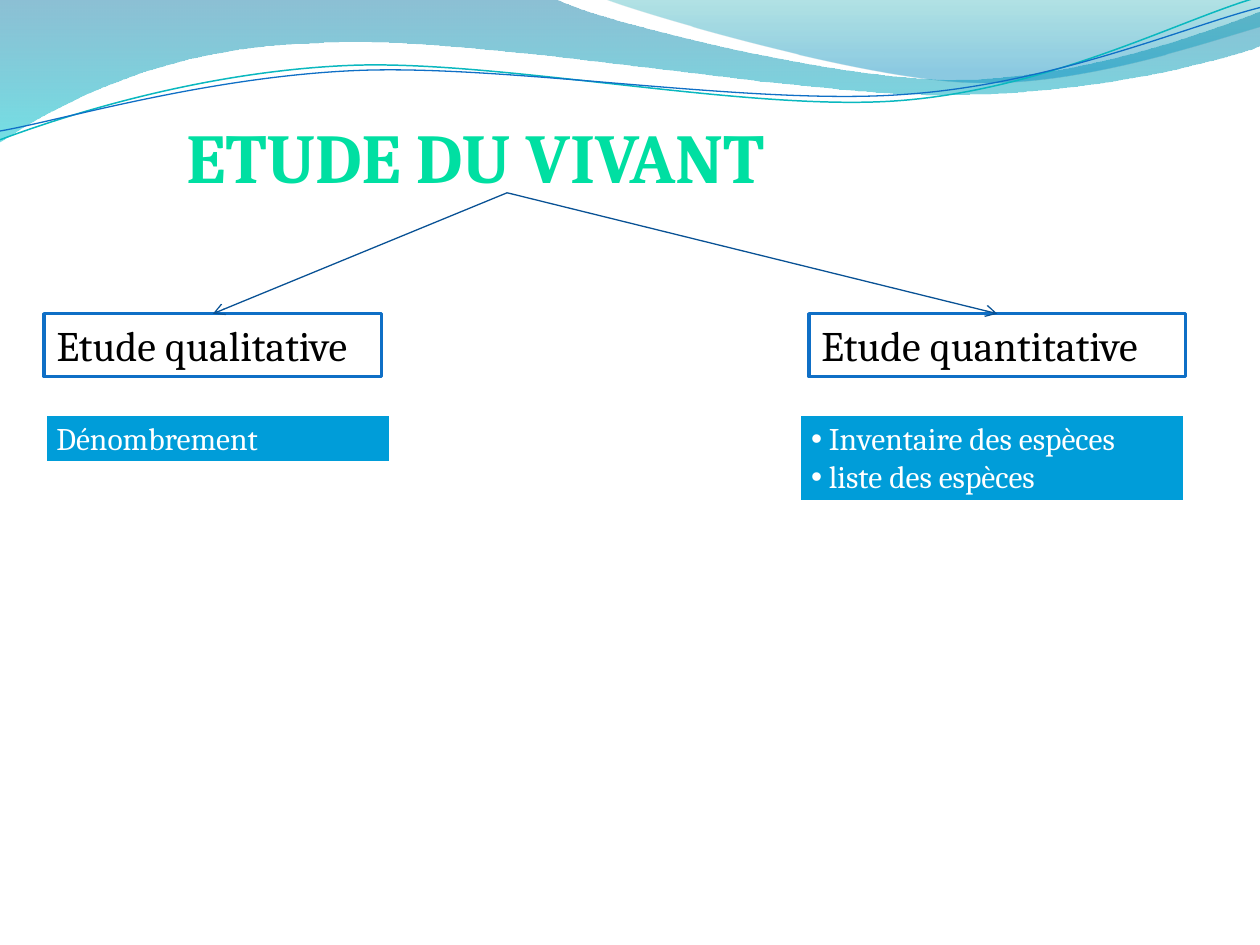
import pptx
import pptx.dml.color
import pptx.enum.shapes
import pptx.enum.text
import pptx.oxml
import pptx.oxml.ns
import pptx.util

Inches, Pt = pptx.util.Inches, pptx.util.Pt
FONT = "Cambria"
TITLE = ("ETUDE DU VIVANT", (1.38, 0.52, 5.29, 1.01))
BRANCHES = [
    {"heading": "Etude quantitative", "heading_box": (6.42, 2.49, 2.99, 0.5),
     "details": ["Inventaire des espèces", "liste des espèces"],
     "details_box": (6.34, 3.28, 3.07, 0.71)},
    {"heading": "Etude qualitative", "heading_box": (0.35, 2.49, 2.68, 0.5),
     "details": ["Dénombrement"], "details_box": (0.35, 3.28, 2.76, 0.4)},
]
BANDS = [
    {"path": [(0, 0), (4.4, -0.01), (4.76, 0.17, 6.64, 0.63, 7.58, 0.63),
              (8.53, 0.63, 9.58, 0.26, 10, 0.09), (10.01, 0.36),
              (9.83, 0.44, 8.7, 0.76, 7.46, 0.75),
              (6.22, 0.75, 3.82, 0.28, 2.57, 0.34),
              (1.29, 0.36, 0.46, 0.83, -0.01, 1.13)],
     "stops": [(0, "0074A1", 45), (100, "00C6CF", 55)]},
    {"path": [(4.79, -0.01), (5.09, 0.11, 6.82, 0.62, 7.69, 0.65),
              (8.56, 0.69, 9.61, 0.32, 10, 0.21), (10, 0)],
     "stops": [(0, "00A1A9", 30), (80, "008BBF", 45)]},
]
WAVES = [
    {"path": [(0, 1.11), (0.48, 0.93, 1.58, 0.57, 2.77, 0.52),
              (3.95, 0.47, 5.93, 0.89, 7.13, 0.8),
              (8.33, 0.71, 9.38, 0.15, 9.98, -0.02)],
     "line": ("0AB8BF", 0.85)},
    {"path": [(0, 1.04), (0.47, 0.96, 1.64, 0.61, 2.83, 0.56),
              (4.03, 0.51, 5.97, 0.84, 7.17, 0.75),
              (8.36, 0.67, 9.41, 0.21, 10, 0.06)],
     "line": ("0F6FC6", 0.75)},
]


def rgb(value):
    """Turn a hex string into a colour."""
    return pptx.dml.color.RGBColor.from_string(value)


def add_xml(parent, tag, **attributes):
    """Append a DrawingML element with the given attributes and return it."""
    element = pptx.oxml.parse_xml(f"<{tag} {pptx.oxml.ns.nsdecls('a')}/>")
    for key, value in attributes.items():
        element.set(key, str(value))
    parent.append(element)
    return element


def add_outline(slide, path, close):
    """Draw a path of line ends and cubic curves as a freeform."""
    start, *rest = [(Inches(x), Inches(y)) for segment in path
                    for x, y in zip(segment[::2], segment[1::2])]
    builder = slide.shapes.build_freeform(*start)
    builder.add_line_segments(rest, close=close)
    outline = builder.convert_to_shape()
    outline.shadow.inherit = False
    lines = iter(list(outline._element.iter(pptx.oxml.ns.qn("a:lnTo"))))
    for segment in path[1:]:
        first = next(lines)
        if len(segment) == 6:
            curve = add_xml(first.getparent(), "a:cubicBezTo")
            first.addprevious(curve)
            for line in (first, next(lines), next(lines)):
                curve.append(line[0])
                line.getparent().remove(line)
    return outline


def add_band(slide, path, stops):
    """Draw a translucent band shaded from top to bottom."""
    band = add_outline(slide, path, True)
    band.line.fill.background()
    band.fill.gradient()
    band.fill.gradient_angle = 270
    for stop, (_, color, _) in zip(band.fill.gradient_stops, stops):
        stop.color.rgb = rgb(color)
    nodes = band._element.spPr.iter(pptx.oxml.ns.qn("a:gs"))
    for node, (position, _, opacity) in zip(nodes, stops):
        node.set("pos", str(position * 1000))
        add_xml(node[0], "a:alpha", val=opacity * 1000)


def add_wave(slide, path, line):
    """Draw a thin open wave."""
    wave = add_outline(slide, path, False)
    wave.fill.background()
    wave.line.color.rgb = rgb(line[0])
    wave.line.width = Pt(line[1])


def write(frame, lines, size, color, bold=False, spacing=None):
    """Fill a text frame, with bullets when there are several lines."""
    frame.word_wrap = True
    frame.auto_size = pptx.enum.text.MSO_AUTO_SIZE.NONE
    frame.vertical_anchor = pptx.enum.text.MSO_ANCHOR.TOP
    for index, line in enumerate(lines):
        paragraph = frame.add_paragraph() if index else frame.paragraphs[0]
        paragraph.alignment = pptx.enum.text.PP_ALIGN.LEFT
        paragraph.line_spacing = spacing
        if len(lines) > 1:
            properties = paragraph._p.get_or_add_pPr()
            properties.set("marL", str(Inches(0.14)))
            properties.set("indent", str(-Inches(0.14)))
            add_xml(properties, "a:buFont", typeface="Arial")
            add_xml(properties, "a:buChar", char="•")
        run = paragraph.add_run()
        run.text = line
        run.font.name, run.font.size, run.font.bold = FONT, Pt(size), bold
        run.font.color.rgb = rgb(color)


def add_box(slide, place, lines, size, color, fill, line, width):
    """Add a bordered rectangle with text."""
    box = slide.shapes.add_shape(pptx.enum.shapes.MSO_SHAPE.RECTANGLE, *map(Inches, place))
    box.shadow.inherit = False
    box.fill.solid()
    box.fill.fore_color.rgb = rgb(fill)
    box.line.color.rgb = rgb(line)
    box.line.width = Pt(width)
    write(box.text_frame, lines, size, color)
    return box


def add_arrow(slide, source, target):
    """Join the bottom of one shape to the top of another."""
    arrow = slide.shapes.add_connector(pptx.enum.shapes.MSO_CONNECTOR.STRAIGHT, 0, 0, 0, 0)
    arrow.begin_connect(source, 2)
    arrow.end_connect(target, 0)
    arrow.line.color.rgb = rgb("095295")
    arrow.line.width = Pt(0.75)
    add_xml(arrow.line._get_or_add_ln(), "a:tailEnd", type="arrow")
    add_xml(arrow._element.spPr, "a:effectLst")


def main():
    """Build the slide and save it."""
    deck = pptx.Presentation()
    deck.slide_width, deck.slide_height = Inches(10), Inches(7.5)
    slide = deck.slides.add_slide(deck.slide_layouts[5])
    for band in BANDS:
        add_band(slide, **band)
    for wave in WAVES:
        add_wave(slide, **wave)
    heading, place = TITLE
    title = slide.shapes.title
    title.left, title.top, title.width, title.height = map(Inches, place)
    write(title.text_frame, [heading], 40, "00DFA2", bold=True, spacing=1.5)
    for branch in BRANCHES:
        topic = add_box(slide, branch["heading_box"], [branch["heading"]],
                        24, "000000", "FFFFFF", "0F6FC6", 2)
        add_arrow(slide, title, topic)
        add_box(slide, branch["details_box"], branch["details"],
                18, "FFFFFF", "009DD9", "FFFFFF", 3)
    deck.save("out.pptx")


if __name__ == "__main__":
    main()
